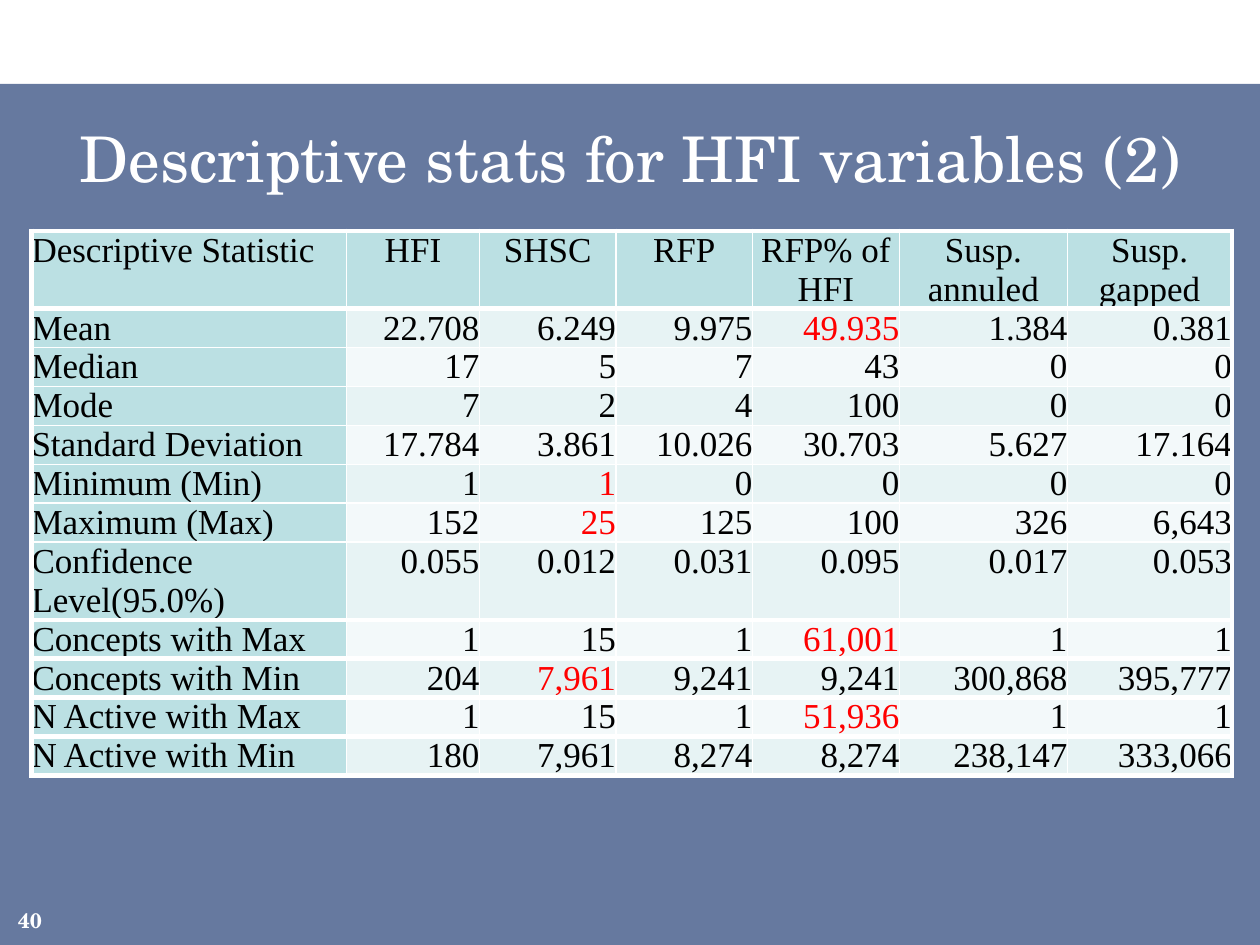
from dataclasses import dataclass

from lxml import etree
from pptx import Presentation
from pptx.dml.color import RGBColor
from pptx.enum.shapes import MSO_SHAPE
from pptx.enum.text import MSO_ANCHOR, PP_ALIGN
from pptx.oxml.ns import qn
from pptx.util import Pt

LEFT, CENTER, RIGHT = PP_ALIGN.LEFT, PP_ALIGN.CENTER, PP_ALIGN.RIGHT
TOP, MIDDLE, BOTTOM = MSO_ANCHOR.TOP, MSO_ANCHOR.MIDDLE, MSO_ANCHOR.BOTTOM
TITLE_ONLY = 5


@dataclass(frozen=True)
class Theme:
    navy: str = "002060"
    white: str = "FFFFFF"
    black: str = "000000"
    red: str = "FF0000"
    label_fill: str = "BBE0E3"
    odd_fill: str = "E7F3F4"
    even_fill: str = "F3F9FA"
    heading_font: str = "TeX Gyre Schola"
    table_font: str = "Times New Roman"
    title_size: int = 36
    table_size: int = 20
    number_size: int = 12


THEME = Theme()

HEADERS = ["Descriptive Statistic", "HFI", "SHSC", "RFP", "RFP% of\nHFI",
           "Susp. annuled", "Susp. gapped"]
STATISTICS = [
    ["Mean", "22.708", "6.249", "9.975", "49.935", "1.384", "0.381"],
    ["Median", "17", "5", "7", "43", "0", "0"],
    ["Mode", "7", "2", "4", "100", "0", "0"],
    ["Standard Deviation", "17.784", "3.861", "10.026", "30.703", "5.627", "17.164"],
    ["Minimum (Min)", "1", "1", "0", "0", "0", "0"],
    ["Maximum (Max)", "152", "25", "125", "100", "326", "6,643"],
    ["Confidence Level(95.0%)", "0.055", "0.012", "0.031", "0.095", "0.017", "0.053"],
    ["Concepts with Max", "1", "15", "1", "61,001", "1", "1"],
    ["Concepts with Min", "204", "7,961", "9,241", "9,241", "300,868", "395,777"],
    ["N Active with Max", "1", "15", "1", "51,936", "1", "1"],
    ["N Active with Min", "180", "7,961", "8,274", "8,274", "238,147", "333,066"],
]
HIGHLIGHTS = {(1, 4), (5, 2), (6, 2), (8, 4), (9, 2), (10, 4)}
COLUMN_WIDTHS = [180, 76, 78, 78, 84, 96, 94]
ROW_HEIGHT = 22
TWO_LINE_ROWS = {0, 7}
THICK_RULES = {0, 1, 8, 9, 10, 11, 12}  # horizontal rules, counted from the top
THICK, THIN = 3, 1


def write_text(frame, text, *, font, size, color, align=LEFT, anchor=TOP, bold=False):
    frame.word_wrap = True
    frame.vertical_anchor = anchor
    for index, line in enumerate(text.split("\n")):
        paragraph = frame.paragraphs[0] if index == 0 else frame.add_paragraph()
        paragraph.alignment = align
        run = paragraph.add_run()
        run.text = line
        run.font.name = font
        run.font.size = Pt(size)
        run.font.bold = bold
        run.font.color.rgb = RGBColor.from_string(color)


def clear_margins(box):
    box.margin_left = box.margin_right = box.margin_top = box.margin_bottom = 0


def add_backdrop(slide):
    band = slide.shapes.add_shape(MSO_SHAPE.RECTANGLE, Pt(0), Pt(48), Pt(720), Pt(492))
    band.shadow.inherit = False
    band.line.fill.background()
    band.fill.solid()
    band.fill.fore_color.rgb = RGBColor.from_string(THEME.navy)
    color = band.fill._xPr.find(qn("a:solidFill"))[0]
    etree.SubElement(color, qn("a:alpha"), val="60000")
    # Send behind the title
    slide.shapes._spTree.insert(2, band._element)


def add_title(slide, text):
    title = slide.shapes.title
    title.left, title.top, title.width, title.height = Pt(18), Pt(60), Pt(684), Pt(60)
    write_text(title.text_frame, text, font=THEME.heading_font, size=THEME.title_size,
               color=THEME.white, align=CENTER, anchor=MIDDLE)


def set_borders(cell, widths):
    properties = cell._tc.get_or_add_tcPr()
    for side, width in widths.items():
        line = etree.SubElement(properties, qn(f"a:ln{side}"), w=str(Pt(width)))
        fill = etree.SubElement(line, qn("a:solidFill"))
        etree.SubElement(fill, qn("a:srgbClr"), val=THEME.white)


def format_cell(cell, text, row, column):
    is_label = row == 0 or column == 0
    clear_margins(cell)
    set_borders(cell, {
        "L": THICK if column == 0 else THIN,
        "R": THICK if column == len(HEADERS) - 1 else THIN,
        "T": THICK if row in THICK_RULES else THIN,
        "B": THICK if row + 1 in THICK_RULES else THIN,
    })
    band_fill = THEME.odd_fill if row % 2 else THEME.even_fill
    cell.fill.solid()
    cell.fill.fore_color.rgb = RGBColor.from_string(
        THEME.label_fill if is_label else band_fill)
    align = LEFT if column == 0 else CENTER if row == 0 else RIGHT
    write_text(cell.text_frame, text, font=THEME.table_font, size=THEME.table_size,
               color=THEME.red if (row, column) in HIGHLIGHTS else THEME.black,
               align=align)


def add_statistics_table(slide):
    rows = [HEADERS] + STATISTICS
    heights = [ROW_HEIGHT * (2 if row in TWO_LINE_ROWS else 1) for row in range(len(rows))]
    table = slide.shapes.add_table(
        len(rows), len(HEADERS), Pt(18), Pt(132),
        Pt(sum(COLUMN_WIDTHS)), Pt(sum(heights))).table
    table.horz_banding = False
    table.first_row = False
    for column, width in enumerate(COLUMN_WIDTHS):
        table.columns[column].width = Pt(width)
    for row, values in enumerate(rows):
        table.rows[row].height = Pt(heights[row])
        for column, text in enumerate(values):
            format_cell(table.cell(row, column), text, row, column)


def add_page_number(slide, number):
    frame = slide.shapes.add_textbox(Pt(0), Pt(510), Pt(24), Pt(23)).text_frame
    clear_margins(frame)
    write_text(frame, number, font=THEME.heading_font, size=THEME.number_size,
               color=THEME.white, align=RIGHT, anchor=BOTTOM, bold=True)


def main():
    deck = Presentation()
    deck.slide_width, deck.slide_height = Pt(720), Pt(540)
    slide = deck.slides.add_slide(deck.slide_layouts[TITLE_ONLY])
    add_backdrop(slide)
    add_title(slide, "Descriptive stats for HFI variables (2)")
    add_statistics_table(slide)
    add_page_number(slide, "40")
    deck.save("out.pptx")


if __name__ == "__main__":
    main()
